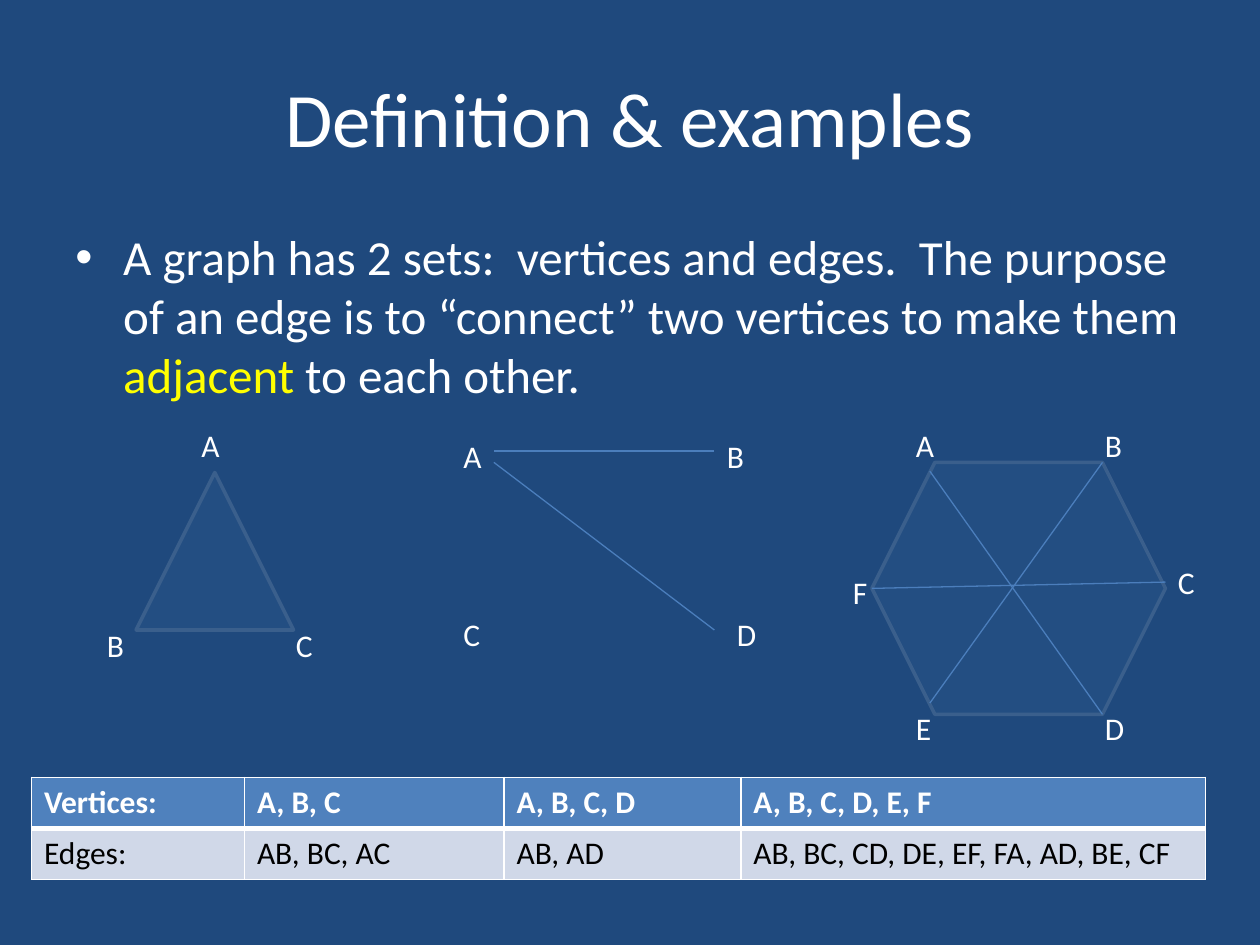
from dataclasses import dataclass

from lxml import etree
from pptx import Presentation
from pptx import util as u
from pptx.dml.color import RGBColor
from pptx.enum import shapes, text
from pptx.oxml import ns

I = u.Inches


@dataclass(frozen=True)
class Theme:
    font: str = "Calibri"
    background: str = "1F497D"
    light: str = "FFFFFF"
    dark: str = "000000"
    highlight: str = "FFFF00"
    accent: str = "4F81BD"
    outline: str = "3A5F8C"
    edge: str = "4B7EBC"
    band: str = "D0D8E8"
    title: int = 44
    body: int = 28
    small: int = 18


T = Theme()


def rgb(value):
    return RGBColor.from_string(value)


def sub(parent, tag, **attrs):
    return etree.SubElement(parent, ns.qn(tag), **attrs)


def add_run(p, words, size=T.small, color=T.light, bold=False):
    r = p.add_run()
    r.text = words
    r.font.name, r.font.size, r.font.bold = T.font, u.Pt(size), bold
    r.font.color.rgb = rgb(color)


def add_title(s, words):
    sp = s.shapes.title
    sp.left, sp.top, sp.width, sp.height = I(0.5), I(0.3), I(9), I(1.25)
    tf = sp.text_frame
    tf.vertical_anchor = text.MSO_ANCHOR.MIDDLE
    p = tf.paragraphs[0]
    p.alignment = text.PP_ALIGN.CENTER
    add_run(p, words, size=T.title)


def add_text_box(s, x, y, w, h):
    tf = s.shapes.add_textbox(I(x), I(y), I(w), I(h)).text_frame
    tf.word_wrap = True
    return tf


def add_bullet(s, parts):
    p = add_text_box(s, 0.5, 1.75, 9, 4.95).paragraphs[0]
    p.space_before = u.Pt(0.2 * T.body)
    pPr = p._p.get_or_add_pPr()
    pPr.set("marL", str(I(0.38)))
    pPr.set("indent", str(I(-0.38)))
    sub(pPr, "a:buFont", typeface="Arial")
    sub(pPr, "a:buChar", char="•")
    for words, color in parts:
        add_run(p, words, size=T.body, color=color)


def add_polygon(s, kind, x, y, w, h):
    sp = s.shapes.add_shape(kind, I(x), I(y), I(w), I(h))
    sp.shadow.inherit = False
    sp.fill.solid()
    sp.fill.fore_color.rgb = rgb(T.accent)
    color = sp._element.spPr.find(".//" + ns.qn("a:srgbClr"))
    sub(color, "a:alpha", val="9000")
    sp.line.color.rgb = rgb(T.outline)
    sp.line.width = u.Pt(2)


def add_edge(s, x1, y1, x2, y2):
    line = s.shapes.add_connector(shapes.MSO_CONNECTOR.STRAIGHT,
                                  I(x1), I(y1), I(x2), I(y2))
    line.line.color.rgb = rgb(T.edge)
    line.line.width = u.Pt(0.75)
    sub(line._element.spPr, "a:effectLst")


def add_vertex(s, name, x, y):
    tf = add_text_box(s, x, y, 0.42, 0.4)
    tf.auto_size = text.MSO_AUTO_SIZE.SHAPE_TO_FIT_TEXT
    add_run(tf.paragraphs[0], name)


def set_borders(cell, **widths):
    """Draw light borders; the XML puts them ahead of the cell's fill."""
    tcPr = cell._tc.get_or_add_tcPr()
    for i, side in enumerate("LRTB"):
        ln = sub(tcPr, "a:ln" + side, w=str(u.Pt(widths.get(side, 1))))
        sub(sub(ln, "a:solidFill"), "a:srgbClr", val=T.light)
        tcPr.insert(i, ln)


def add_set_table(s, rows):
    widths = (1.69, 2.06, 1.88, 3.69)
    table = s.shapes.add_table(len(rows), len(widths), I(0.25), I(6.17),
                               I(sum(widths)), I(0.81)).table
    for col, w in zip(table.columns, widths):
        col.width = I(w)
    for i, row in enumerate(rows):
        header = i == 0
        for j, words in enumerate(row):
            cell = table.cell(i, j)
            cell.fill.solid()
            cell.fill.fore_color.rgb = rgb(T.accent if header else T.band)
            set_borders(cell, **({"B": 3} if header else {"T": 3}))
            add_run(cell.text_frame.paragraphs[0], words, bold=header,
                    color=T.light if header else T.dark)


def main():
    prs = Presentation()
    prs.slide_width, prs.slide_height = I(10), I(7.5)
    s = prs.slides.add_slide(prs.slide_layouts[5])
    s.background.fill.solid()
    s.background.fill.fore_color.rgb = rgb(T.background)

    # Title and definition
    add_title(s, "Definition & examples")
    add_bullet(s, [
        ("A graph has 2 sets:  vertices and edges.  The purpose of an edge "
         "is to “connect” two vertices to make them ", T.light),
        ("adjacent", T.highlight),
        (" to each other.", T.light),
    ])

    # Outlines of the first and third graphs
    add_polygon(s, shapes.MSO_SHAPE.ISOSCELES_TRIANGLE, 1.08, 3.75, 1.25, 1.25)
    add_polygon(s, shapes.MSO_SHAPE.HEXAGON, 6.92, 3.67, 2.33, 2)

    # Edges of the second graph, then diagonals of the hexagon
    for ends in ((3.92, 3.58, 5.67, 3.58), (3.92, 3.67, 5.67, 5),
                 (7.38, 3.74, 8.75, 5.67), (6.92, 4.67, 9.25, 4.62),
                 (8.75, 3.67, 7.38, 5.58)):
        add_edge(s, *ends)

    # Vertex names, one graph a line
    graphs = (
        (("A", 1.5, 3.33), ("B", 0.75, 4.92), ("C", 2.25, 4.92)),
        (("A", 3.58, 3.42), ("B", 5.67, 3.42), ("D", 5.75, 4.83), ("C", 3.58, 4.83)),
        (("A", 7.17, 3.33), ("B", 8.67, 3.33), ("C", 9.25, 4.42),
         ("D", 8.67, 5.58), ("E", 7.17, 5.58), ("F", 6.67, 4.5)),
    )
    for graph in graphs:
        for vertex in graph:
            add_vertex(s, *vertex)

    # Vertex and edge sets
    add_set_table(s, [
        ("Vertices:", "A, B, C", "A, B, C, D", "A, B, C, D, E, F"),
        ("Edges:", "AB, BC, AC", "AB, AD", "AB, BC, CD, DE, EF, FA, AD, BE, CF"),
    ])
    prs.save("out.pptx")


if __name__ == "__main__":
    main()
